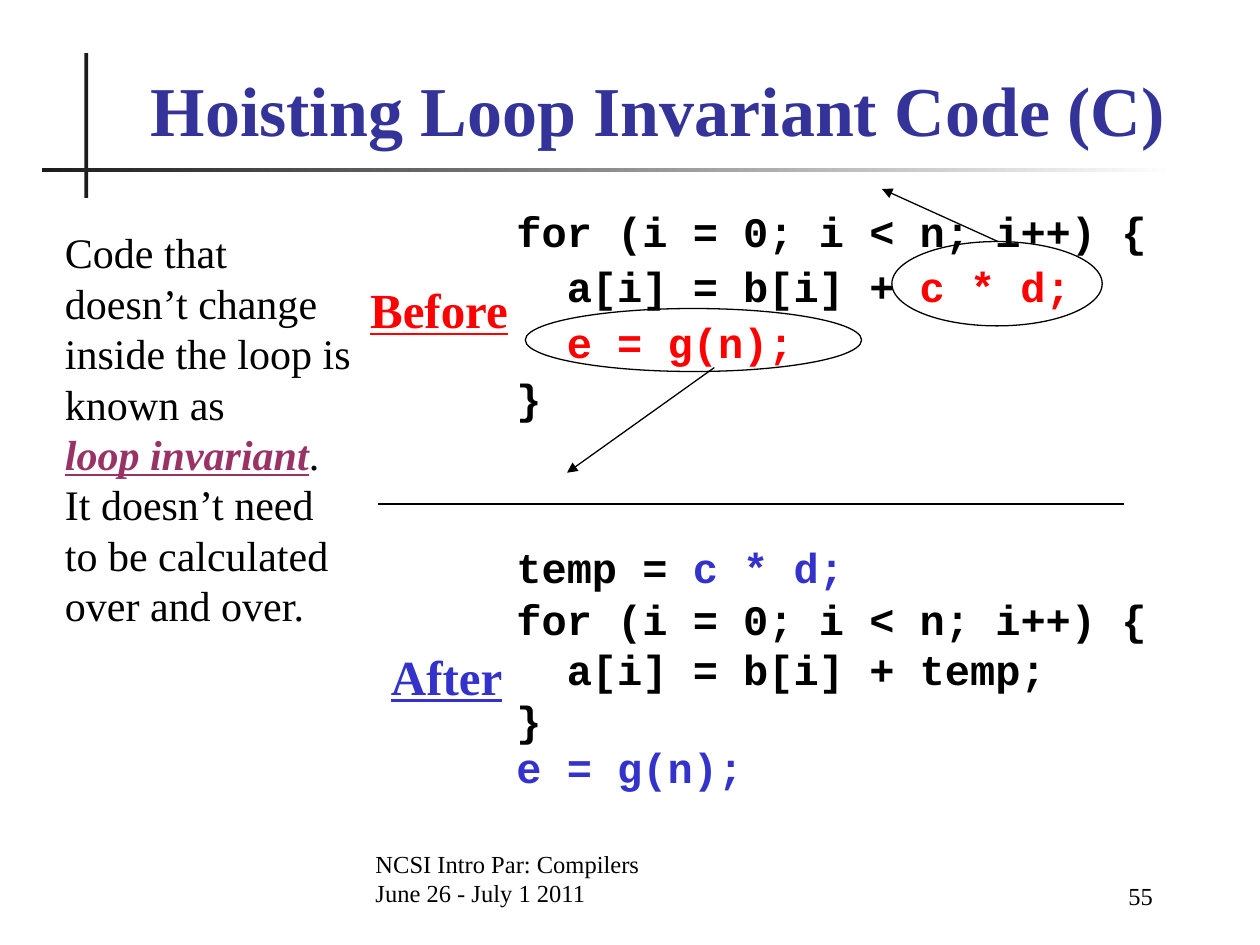
from lxml.etree import SubElement
from pptx import Presentation
from pptx.dml.color import RGBColor
from pptx.enum.shapes import MSO_CONNECTOR as CONNECTOR, MSO_SHAPE as SHAPE
from pptx.enum.text import MSO_ANCHOR as ANCHOR, PP_ALIGN as ALIGN
from pptx.oxml.ns import qn
from pptx.util import Cm, Pt

BLACK = RGBColor(0, 0, 0)
WHITE = RGBColor(255, 255, 255)
CHARCOAL = RGBColor(0x1C, 0x1C, 0x1C)
NAVY = RGBColor(0x33, 0x33, 0x99)
BLUE = RGBColor(0x33, 0x33, 0xCC)
RED = RGBColor(255, 0, 0)
PLUM = RGBColor(0x99, 0x33, 0x66)

SERIF = {"name": "Times New Roman", "color": BLACK}
TITLE = {**SERIF, "size": Pt(40), "bold": True, "color": NAVY}
BODY = {**SERIF, "size": Pt(24)}
TERM = {**BODY, "bold": True, "italic": True, "underline": True, "color": PLUM}
FOOTER = {**SERIF, "size": Pt(14)}
LABEL = {**SERIF, "size": Pt(28), "bold": True, "underline": True}
CODE = {"name": "Courier New", "size": Pt(24), "bold": True, "color": BLACK}
CODE_RED = {**CODE, "color": RED}
CODE_BLUE = {**CODE, "color": BLUE}

LOOP = [("for (i = 0; i < n; i++) {", CODE)]
CLOSE = [("}", CODE)]
BEFORE = [
    LOOP,
    [("  a[i] = b[i] + ", CODE), ("c * d;", CODE_RED)],
    [("  e = g(n);", CODE_RED)],
    CLOSE,
]
AFTER = [
    [("temp = ", CODE), ("c * d;", CODE_BLUE)],
    LOOP,
    [("  a[i] = b[i] + temp;", CODE)],
    CLOSE,
    [("e = g(n);", CODE_BLUE)],
]
EXPLANATION = [[
    ("Code that doesn’t change inside the loop is known as\v", BODY),
    ("loop invariant", TERM),
    (". It doesn’t need to be calculated over and over.", BODY),
]]
FOOTER_LINES = [
    [("NCSI Intro Par: Compilers", FOOTER)],
    [("June 26 - July 1 2011", FOOTER)],
]

TEXTS = [
    ((2.12, 1.27, 22.28, 1.88), [[("Hoisting Loop Invariant Code (C)", TITLE)]],
     {"align": ALIGN.CENTER, "anchor": ANCHOR.BOTTOM}),
    ((10.16, 4.02, 13.77, 6.57), BEFORE, {"spacings": (1, 0.9, 0.9, 0.9), "gap": 6}),
    ((7.32, 17.15, 11.1, 1.27), FOOTER_LINES, {"anchor": ANCHOR.BOTTOM}),
    ((19.89, 17.2, 3.6, 1.27), [[("55", FOOTER)]],
     {"align": ALIGN.RIGHT, "anchor": ANCHOR.BOTTOM}),
    ((7.2, 5.51, 3.3, 1.45), [[("Before", {**LABEL, "color": RED})]],
     {"align": ALIGN.CENTER, "wrap": False}),
    ((10.16, 10.8, 13.54, 6.35), AFTER, {"spacings": (1, 0.8, 0.8, 0.8, 0.7), "gap": 6}),
    ((7.62, 12.9, 2.77, 1.45), [[("After", {**LABEL, "color": BLUE})]],
     {"align": ALIGN.CENTER, "wrap": False}),
    ((1.06, 4.45, 6.35, 8.46), EXPLANATION, {}),
]
ELLIPSES = [(17.98, 4.87, 4.24, 1.7), (10.59, 6.22, 6.78, 1.27)]
ARROWS = [(20.12, 4.87, 17.78, 3.81), (14.4, 7.41, 11.43, 9.53)]
DIVIDER = (7.62, 10.16, 22.66, 10.16)


def add_shape(slide, kind, box):
    shape = slide.shapes.add_shape(kind, *map(Cm, box))
    shape.shadow.inherit = False
    return shape


def add_bars(slide):
    vertical = add_shape(slide, SHAPE.RECTANGLE, (1.7, 1.07, 0.08, 2.92))
    vertical.fill.solid()
    vertical.fill.fore_color.rgb = CHARCOAL
    horizontal = add_shape(slide, SHAPE.RECTANGLE, (0.84, 3.38, 22.86, 0.08))
    horizontal.fill.gradient()
    horizontal.fill.gradient_angle = 0
    for stop, color in zip(horizontal.fill.gradient_stops, (CHARCOAL, WHITE)):
        stop.color.rgb = color
    for bar in (vertical, horizontal):
        bar.line.fill.background()


def add_text(slide, box, lines, align=ALIGN.LEFT, anchor=ANCHOR.TOP,
             wrap=True, spacings=None, gap=0):
    frame = slide.shapes.add_textbox(*map(Cm, box)).text_frame
    frame.word_wrap = wrap
    frame.vertical_anchor = anchor
    for index, runs in enumerate(lines):
        paragraph = frame.add_paragraph() if index else frame.paragraphs[0]
        paragraph.alignment = align
        paragraph.space_before = Pt(gap if index else 0)
        if spacings:
            paragraph.line_spacing = float(spacings[index])
        for text, style in runs:
            for part_index, part in enumerate(text.split("\v")):
                if part_index:
                    paragraph.add_line_break()
                if part:
                    run = paragraph.add_run()
                    run.text = part
                    for key, value in style.items():
                        if key == "color":
                            run.font.color.rgb = value
                        else:
                            setattr(run.font, key, value)


def outline(shape):
    shape.line.color.rgb = BLACK
    shape.line.width = Pt(0.75)


def add_line(slide, ends, arrow=False):
    connector = slide.shapes.add_connector(CONNECTOR.STRAIGHT, *map(Cm, ends))
    outline(connector)
    if arrow:
        SubElement(connector.line._get_or_add_ln(), qn("a:tailEnd"), type="triangle")
    SubElement(connector._element.spPr, qn("a:effectLst"))


def main():
    presentation = Presentation()
    presentation.slide_width, presentation.slide_height = Cm(25.4), Cm(19.05)
    slide = presentation.slides.add_slide(presentation.slide_layouts[6])
    add_bars(slide)
    for box, lines, options in TEXTS:
        add_text(slide, box, lines, **options)
    for box in ELLIPSES:
        ellipse = add_shape(slide, SHAPE.OVAL, box)
        ellipse.fill.background()
        outline(ellipse)
    for ends in ARROWS:
        add_line(slide, ends, arrow=True)
    add_line(slide, DIVIDER)
    presentation.save("out.pptx")


if __name__ == "__main__":
    main()
